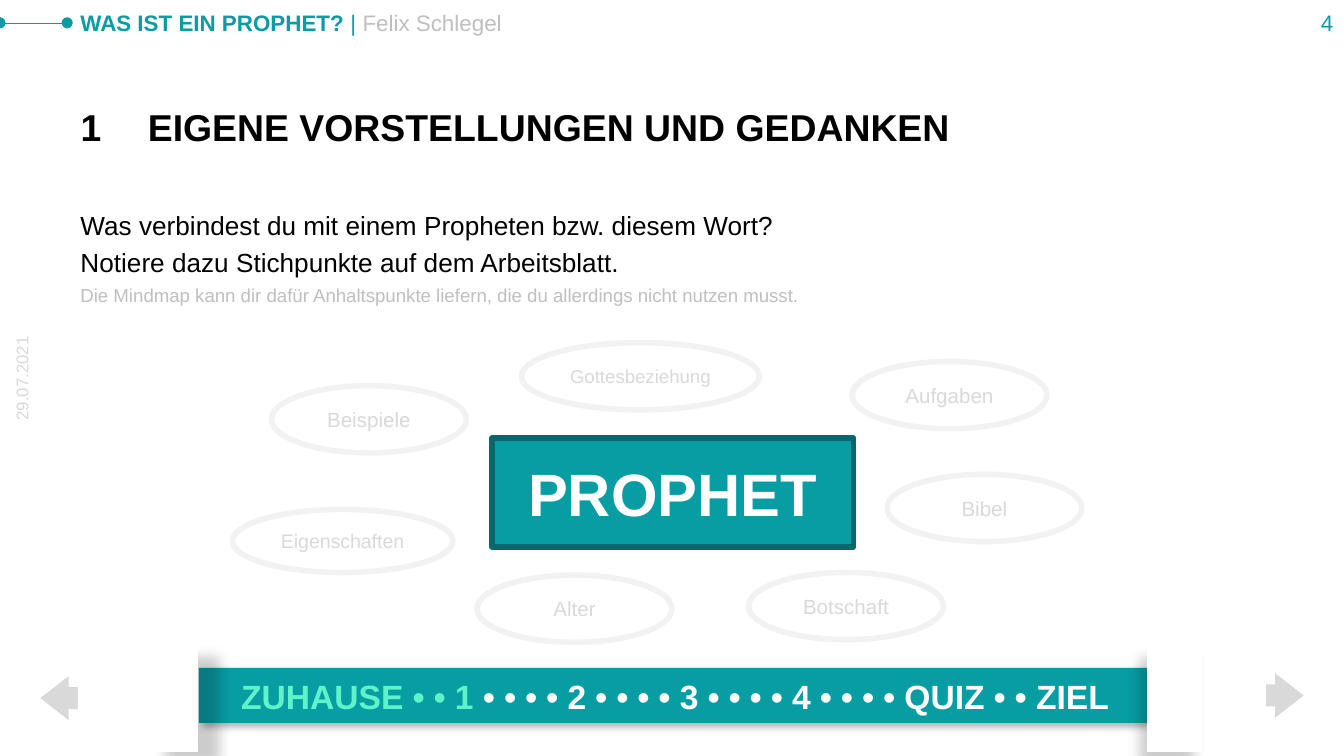
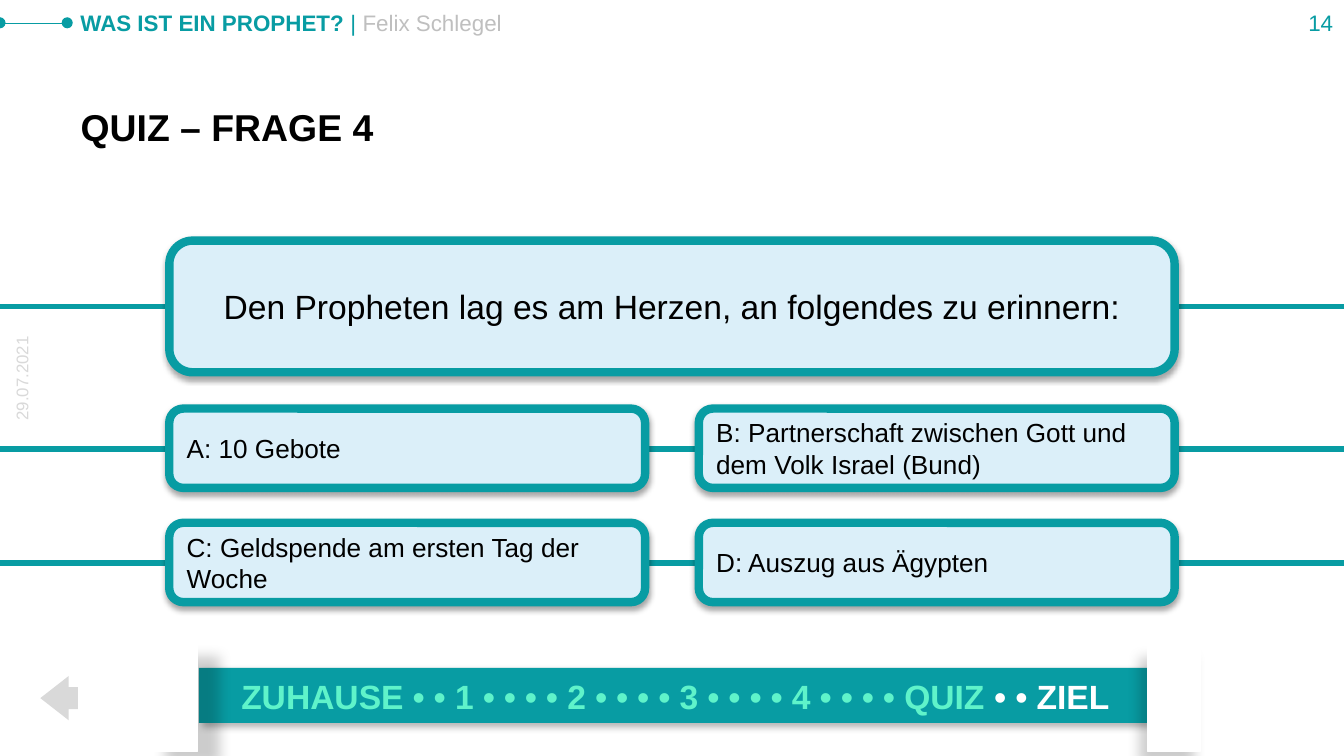
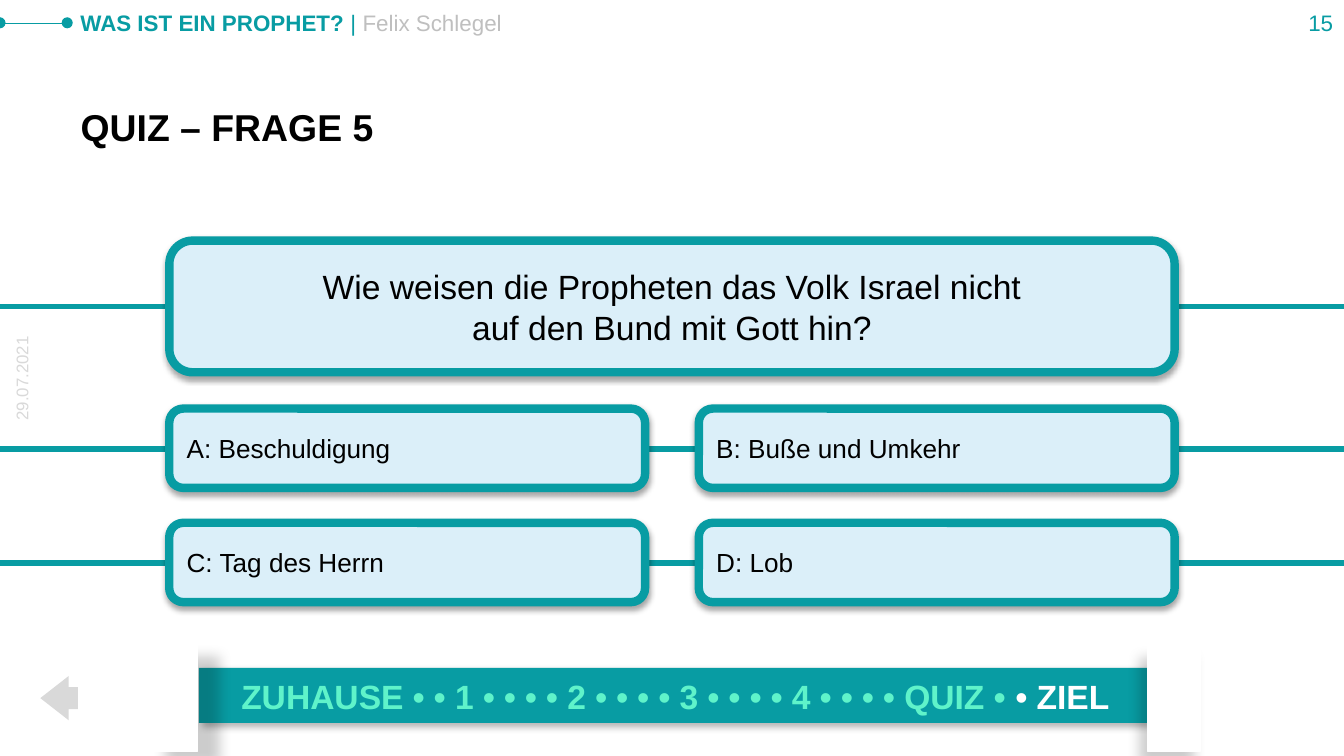
from lxml import etree
from pptx import Presentation
from pptx.dml.color import RGBColor
from pptx.enum.shapes import MSO_CONNECTOR, MSO_SHAPE
from pptx.enum.text import MSO_ANCHOR, MSO_AUTO_SIZE, PP_ALIGN
from pptx.oxml.ns import qn
from pptx.util import Pt

RECT, ROUND, OVAL = MSO_SHAPE.RECTANGLE, MSO_SHAPE.ROUNDED_RECTANGLE, MSO_SHAPE.OVAL
ARROW_LEFT, ARROW_RIGHT = MSO_SHAPE.LEFT_ARROW, MSO_SHAPE.RIGHT_ARROW
STRAIGHT = MSO_CONNECTOR.STRAIGHT
LEFT, CENTER, RIGHT = PP_ALIGN.LEFT, PP_ALIGN.CENTER, PP_ALIGN.RIGHT
TOP, MIDDLE, BOTTOM = MSO_ANCHOR.TOP, MSO_ANCHOR.MIDDLE, MSO_ANCHOR.BOTTOM
FIT_NONE = MSO_AUTO_SIZE.NONE

FONT = "Arial"
TEAL, TEAL_DARK, MINT, ICE = "089CA3", "06686C", "5FF3CA", "DBEFF9"
WHITE, BLACK = "FFFFFF", "000000"
GREY, GREY_LIGHT, GREY_PALE = "BFBFBF", "D9D9D9", "F2F2F2"
W = 1000
TITLE_ONLY = 5
TRAIL = "ZUHAUSE • • 1 • • • • 2 • • • • 3 • • • • 4 • • • • QUIZ • • ZIEL"


def px(n):
    """Convert px, 100 to the inch, into EMU."""
    return n * 9144


def rgb(color):
    return RGBColor.from_string(color)


def put_text(sp, *paras, align=LEFT, anchor=TOP, margin=None, before=0,
             tab=None, **font):
    """Fill a shape; a paragraph is a string or a list of (text, format)."""
    tf = sp.text_frame
    tf.word_wrap = True
    tf.auto_size = FIT_NONE
    tf.vertical_anchor = anchor
    if margin is not None:
        tf.margin_left = tf.margin_top = px(margin)
        tf.margin_right = tf.margin_bottom = px(margin)
    for i, para in enumerate(paras):
        p = tf.add_paragraph() if i else tf.paragraphs[0]
        if tab:
            tabs = etree.SubElement(p._p.get_or_add_pPr(), qn("a:tabLst"))
            etree.SubElement(tabs, qn("a:tab"), pos=str(px(tab)), algn="l")
        p.alignment = align
        p.space_before = Pt(before if i else 0)
        for text, own in [(para, {})] if isinstance(para, str) else para:
            r = p.add_run()
            r.text = text
            fmt = {"size": 12, "color": BLACK, "bold": False, **font, **own}
            r.font.name = FONT
            r.font.size = Pt(fmt["size"])
            r.font.bold = fmt["bold"]
            r.font.color.rgb = rgb(fmt["color"])


def add_text(s, box, *paras, **fmt):
    sp = s.shapes.add_textbox(*map(px, box))
    put_text(sp, *paras, **fmt)
    return sp


def add_shape(s, kind, box, fill, line=None, width=1, shadow=None, adj=()):
    """Draw a preset shape; shadow is (opacity %, blur pt, distance pt, angle)."""
    sp = s.shapes.add_shape(kind, *map(px, box))
    sp.fill.solid()
    sp.fill.fore_color.rgb = rgb(fill)
    if line:
        sp.line.color.rgb = rgb(line)
        sp.line.width = Pt(width)
    else:
        sp.line.fill.background()
    for i, value in enumerate(adj):
        sp.adjustments[i] = value
    sp.shadow.inherit = False
    if shadow:
        opacity, blur, dist, angle = shadow
        effects = sp._element.spPr.find(qn("a:effectLst"))
        outer = etree.SubElement(
            effects, qn("a:outerShdw"), blurRad=str(Pt(blur)), dist=str(Pt(dist)),
            dir=str(angle * 60000), algn="ctr", rotWithShape="0")
        color = etree.SubElement(outer, qn("a:srgbClr"), val=BLACK)
        etree.SubElement(color, qn("a:alpha"), val=str(opacity * 1000))
    return sp


def add_rule(s, x1, x2, y, width, dots=False):
    """Draw a horizontal teal line, with round ends if dots is set."""
    line = s.shapes.add_connector(STRAIGHT, px(x1), px(y), px(x2), px(y))
    line.line.color.rgb = rgb(TEAL)
    line.line.width = Pt(width)
    if dots:
        ln = line.line._get_or_add_ln()
        for end in ("a:headEnd", "a:tailEnd"):
            etree.SubElement(ln, qn(end), type="oval")
    etree.SubElement(line._element.spPr, qn("a:effectLst"))


def header(s, x, y, number):
    add_rule(s, x, x + 50, y + 17, 0.25, dots=True)
    add_text(s, (x + 50, y + 2, 766, 30),
             [("WAS IST EIN PROPHET? ", {"bold": True}), ("| ", {}),
              ("Felix Schlegel", {"color": GREY})], color=TEAL)
    add_text(s, (x + 948, y + 7, 44, 20), str(number),
             align=RIGHT, margin=0, color=TEAL)


def date_mark(s, x, y):
    sp = add_text(s, (x, y, 128, 15), "29.07.2021",
                  align=CENTER, margin=0, size=9, color=GREY_LIGHT)
    sp.rotation = 270


def progress_ribbon(s, x, y, w, h, done):
    """Teal band between two white end pieces; done is the lit start of the trail."""
    add_shape(s, RECT, (x, y, w, h), TEAL, shadow=(30, 4, 2, 45))
    for left, shadow in ((x - 40, (20, 7, 13, 30)), (x + w, (20, 7, 8, 120))):
        add_shape(s, RECT, (left, y - 17, 39, 79), WHITE, WHITE, 0.75, shadow)
    add_text(s, (x + 6, y + 6, w - 9, 30),
             [(done, {"color": MINT}), (TRAIL[len(done):], {})],
             align=CENTER, margin=0, size=18, color=WHITE, bold=True)


def nav_arrow(s, kind, x, y):
    add_shape(s, kind, (x, y, 28, 33), GREY_LIGHT, adj=(0.5, 0.756))


def new_slide(prs, title, number, done, has_next=False):
    s = prs.slides.add_slide(prs.slide_layouts[TITLE_ONLY])
    sp = s.shapes.title
    sp.left, sp.top, sp.width, sp.height = map(px, (50, 33, 901, 83))
    put_text(sp, title, anchor=BOTTOM, tab=50, size=20, bold=True)
    header(s, 0, 0, number)
    date_mark(s, -48, 274)
    progress_ribbon(s, 148, 497, 706, 41, done)
    nav_arrow(s, ARROW_LEFT, 30, 503)
    if has_next:
        nav_arrow(s, ARROW_RIGHT, 942, 501)
    return s


def mindmap(s, x, y):
    hub = add_shape(s, RECT, (x + 193, y + 71, 269, 81), TEAL, TEAL_DARK, 3)
    put_text(hub, "PROPHET", align=CENTER, anchor=MIDDLE,
             size=32, color=WHITE, bold=True)
    ideas = [("Beispiele", 29, 32, 145, 50, 11),
             ("Eigenschaften", 0, 124, 164, 47, 10.5),
             ("Alter", 182, 173, 145, 50, 11),
             ("Aufgaben", 461, 14, 145, 50, 11),
             ("Bibel", 487, 98, 145, 50, 11),
             ("Botschaft", 384, 171, 145, 50, 11),
             ("Gottesbeziehung", 215, 0, 177, 50, 10)]
    for label, dx, dy, w, h, size in ideas:
        idea = add_shape(s, OVAL, (x + dx, y + dy, w, h), WHITE, GREY_PALE, 3)
        put_text(idea, label, align=CENTER, anchor=MIDDLE, margin=0,
                 size=size, color=GREY_LIGHT)


def task_slide(prs):
    s = new_slide(prs, "1\tEIGENE VORSTELLUNGEN UND GEDANKEN", 4,
                  "ZUHAUSE • • 1 ", has_next=True)
    hint = ("Die Mindmap kann dir dafür Anhaltspunkte liefern, "
            "die du allerdings nicht nutzen musst.")
    add_text(s, (50, 151, 868, 102),
             "Was verbindest du mit einem Propheten bzw. diesem Wort?",
             "Notiere dazu Stichpunkte auf dem Arbeitsblatt.",
             [(hint, {"size": 10, "color": GREY})], before=3, size=14)
    mindmap(s, 173, 255)


def quiz_box(s, box, *paras, **fmt):
    sp = add_shape(s, ROUND, box, ICE, TEAL, 4.5, (35, 3.1, 1.8, 90), (0.178,))
    put_text(sp, *paras, anchor=MIDDLE, **fmt)


def quiz_board(s, x, y, w, question, answers):
    """Question box above a two-by-two grid of answers, strung on lines."""
    question_h, answer_w, answer_h, first_row, pitch = 98, 354, 59, 125, 85
    rows = [y + first_row + i * pitch for i in range(2)]
    add_rule(s, 0, W, y + question_h // 2, 3)
    for top in rows:
        add_rule(s, 0, W, top + (answer_h + 1) // 2, 3)
    quiz_box(s, (x, y, w, question_h), *question, align=CENTER, size=18)
    for i, answer in enumerate(answers):
        left = x + i % 2 * (w - answer_w)
        quiz_box(s, (left, rows[i // 2], answer_w, answer_h),
                 f"{'ABCD'[i]}: {answer}", size=14)


def quiz_slide(prs, question_no, number, done, question, answers):
    s = new_slide(prs, f"QUIZ – FRAGE {question_no}", number, done)
    quiz_board(s, 126, 179, 748, question, answers)


def main():
    prs = Presentation()
    prs.slide_width, prs.slide_height = px(W), px(W) * 9 // 16
    task_slide(prs)
    to_quiz = TRAIL[:TRAIL.index("QUIZ") + len("QUIZ ")]
    quiz_slide(prs, 4, 14, to_quiz,
               ["Den Propheten lag es am Herzen, an folgendes zu erinnern:"],
               ["10 Gebote", "Partnerschaft zwischen Gott und dem Volk Israel (Bund)",
                "Geldspende am ersten Tag der Woche", "Auszug aus Ägypten"])
    quiz_slide(prs, 5, 15, to_quiz + "• ",
               ["Wie weisen die Propheten das Volk Israel nicht",
                "auf den Bund mit Gott hin?"],
               ["Beschuldigung", "Buße und Umkehr", "Tag des Herrn", "Lob"])
    prs.save("out.pptx")


if __name__ == "__main__":
    main()
